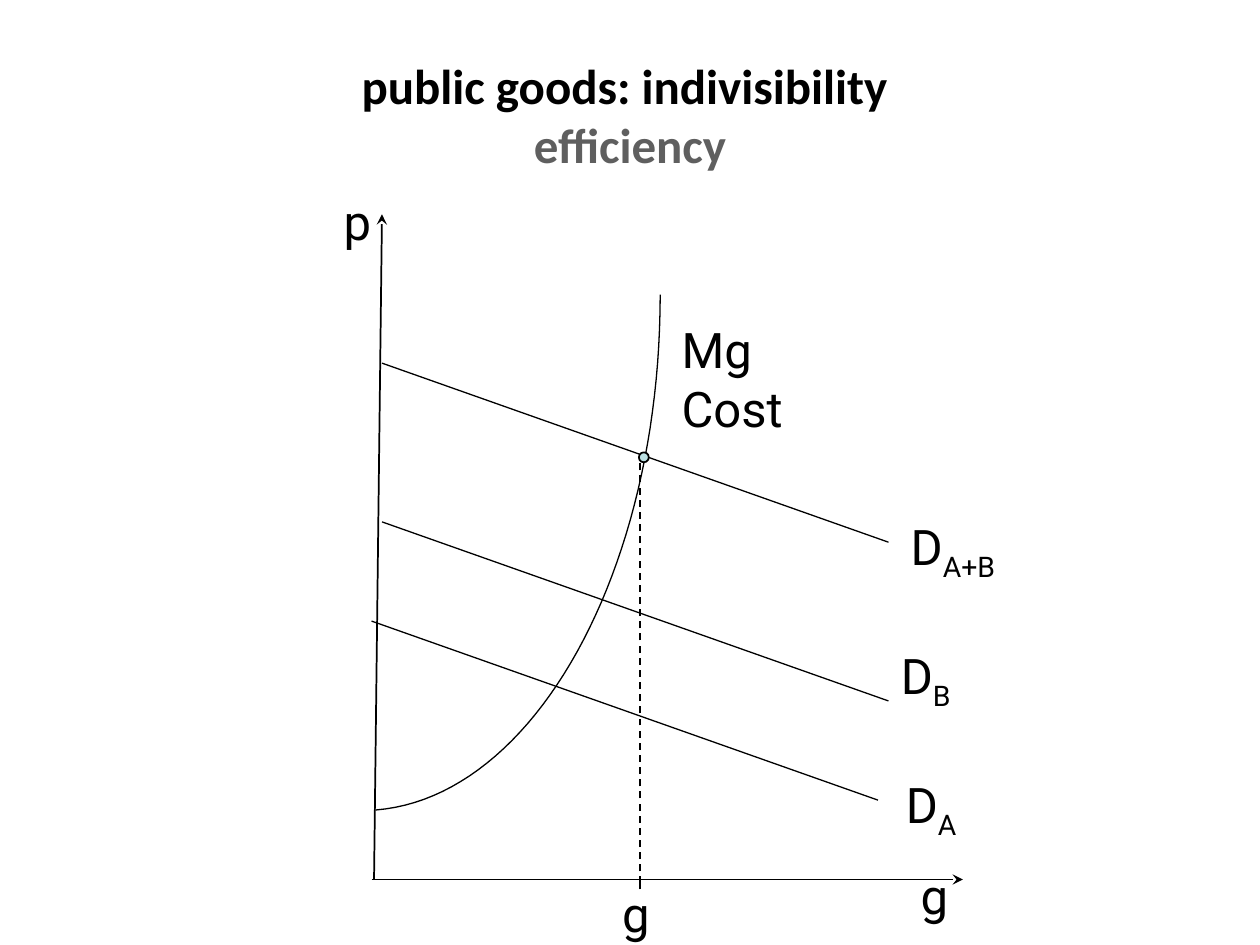
"""Build a slide on the efficient supply of an indivisible public good."""
from dataclasses import dataclass

from lxml.etree import SubElement
from pptx import Presentation
from pptx.dml.color import RGBColor
from pptx.enum.dml import MSO_LINE
from pptx.enum.shapes import MSO_CONNECTOR, MSO_SHAPE
from pptx.enum.text import MSO_ANCHOR, MSO_AUTO_SIZE, PP_ALIGN
from pptx.oxml.ns import qn
from pptx.util import Cm, Pt


@dataclass(frozen=True)
class Theme:
    ink: RGBColor = RGBColor(0x00, 0x00, 0x00)
    muted: RGBColor = RGBColor(0x5F, 0x5F, 0x5F)
    marker: RGBColor = RGBColor(0xBB, 0xE0, 0xE3)
    title_font: str = "Calibri"
    label_font: str = "Roboto"
    text_size: Pt = Pt(28)
    axis_width: Pt = Pt(1)
    curve_width: Pt = Pt(0.75)


THEME = Theme()
LABEL_HEIGHT = 1.45
DEMAND_RUN, DEMAND_DROP = 10.21, 3.61
DEMAND_STARTS = [(7.49, 12.52), (7.7, 10.52), (7.7, 7.32)]
COST_CURVE = [(7.57, 16.33), (10.77, 16.08), (13.31, 11.51), (13.31, 5.94)]
LABELS = [
    ("p", "", 6.68, 3.73, 1.02),
    ("g", "", 18.31, 17.32, 0.99),
    ("g", "", 12.29, 17.68, 1.3),
    ("D", "A", 18.01, 15.49, 1.7),
    ("D", "B", 17.91, 12.88, 1.63),
    ("D", "A+B", 18.11, 10.29, 2.44),
    ("Mg Cost", "", 13.49, 6.32, 3.94),
]


def add_span(para, text, font, color, bold=False):
    span = para.add_run()
    span.text = text
    span.font.name = font
    span.font.size = THEME.text_size
    span.font.bold = bold
    span.font.color.rgb = color
    return span


def add_box(page, left, top, width, height):
    box = page.shapes.add_textbox(Cm(left), Cm(top), Cm(width), Cm(height))
    box.text_frame.word_wrap = True
    return box.text_frame


def add_title(page, first, second):
    frame = add_box(page, 1.27, 0.71, 22.86, 3.18)
    frame.vertical_anchor = MSO_ANCHOR.MIDDLE
    para = frame.paragraphs[0]
    para.alignment = PP_ALIGN.CENTER
    add_span(para, first, THEME.title_font, THEME.ink, bold=True)
    para.add_line_break()
    add_span(para, second, THEME.title_font, THEME.muted, bold=True)


def add_label(page, text, subscript, left, top, width):
    frame = add_box(page, left, top, width, LABEL_HEIGHT)
    frame.auto_size = MSO_AUTO_SIZE.SHAPE_TO_FIT_TEXT
    para = frame.paragraphs[0]
    add_span(para, text, THEME.label_font, THEME.ink)
    if subscript:
        span = add_span(para, subscript, THEME.label_font, THEME.ink)
        span.font._element.set("baseline", "-25000")


def add_line(page, start, end, width, arrow=False, dashed=False):
    points = [Cm(value) for value in (*start, *end)]
    connector = page.shapes.add_connector(MSO_CONNECTOR.STRAIGHT, *points)
    connector.line.color.rgb = THEME.ink
    connector.line.width = width
    if dashed:
        connector.line.dash_style = MSO_LINE.DASH
    if arrow:
        SubElement(connector.line._get_or_add_ln(), qn("a:tailEnd"), type="stealth")
    SubElement(connector._element.spPr, qn("a:effectLst"))


def bezier_point(controls, t):
    weights = ((1 - t) ** 3, 3 * t * (1 - t) ** 2, 3 * t ** 2 * (1 - t), t ** 3)
    return tuple(
        Cm(sum(weight * value for weight, value in zip(weights, axis)))
        for axis in zip(*controls)
    )


def add_curve(page, controls, steps=48):
    points = [bezier_point(controls, step / steps) for step in range(steps + 1)]
    builder = page.shapes.build_freeform(*points[0])
    builder.add_line_segments(points[1:], close=False)
    curve = builder.convert_to_shape()
    curve.shadow.inherit = False
    curve.fill.background()
    curve.line.color.rgb = THEME.ink
    curve.line.width = THEME.curve_width


def add_marker(page, left, top, size):
    marker = page.shapes.add_shape(
        MSO_SHAPE.FLOWCHART_CONNECTOR, Cm(left), Cm(top), Cm(size), Cm(size)
    )
    marker.shadow.inherit = False
    marker.fill.solid()
    marker.fill.fore_color.rgb = THEME.marker
    marker.line.color.rgb = THEME.ink
    marker.line.width = THEME.axis_width


def main():
    deck = Presentation()
    deck.slide_width, deck.slide_height = Cm(25.4), Cm(19.05)
    page = deck.slides.add_slide(deck.slide_layouts[6])

    add_curve(page, COST_CURVE)
    add_title(page, "public goods: indivisibility ", "efficiency")
    add_line(page, (7.49, 17.73), (19.41, 17.73), THEME.axis_width, arrow=True)
    add_line(page, (7.54, 17.73), (7.7, 4.32), THEME.axis_width, arrow=True)
    add_line(page, (12.9, 17.93), (12.9, 17.65), THEME.axis_width)
    add_line(page, (12.9, 17.81), (12.9, 9.32), THEME.axis_width, dashed=True)
    for left, top in DEMAND_STARTS:
        end = (left + DEMAND_RUN, top + DEMAND_DROP)
        add_line(page, (left, top), end, THEME.curve_width)
    add_marker(page, 12.88, 9.12, 0.2)
    for label in LABELS:
        add_label(page, *label)

    deck.save("out.pptx")


if __name__ == "__main__":
    main()
